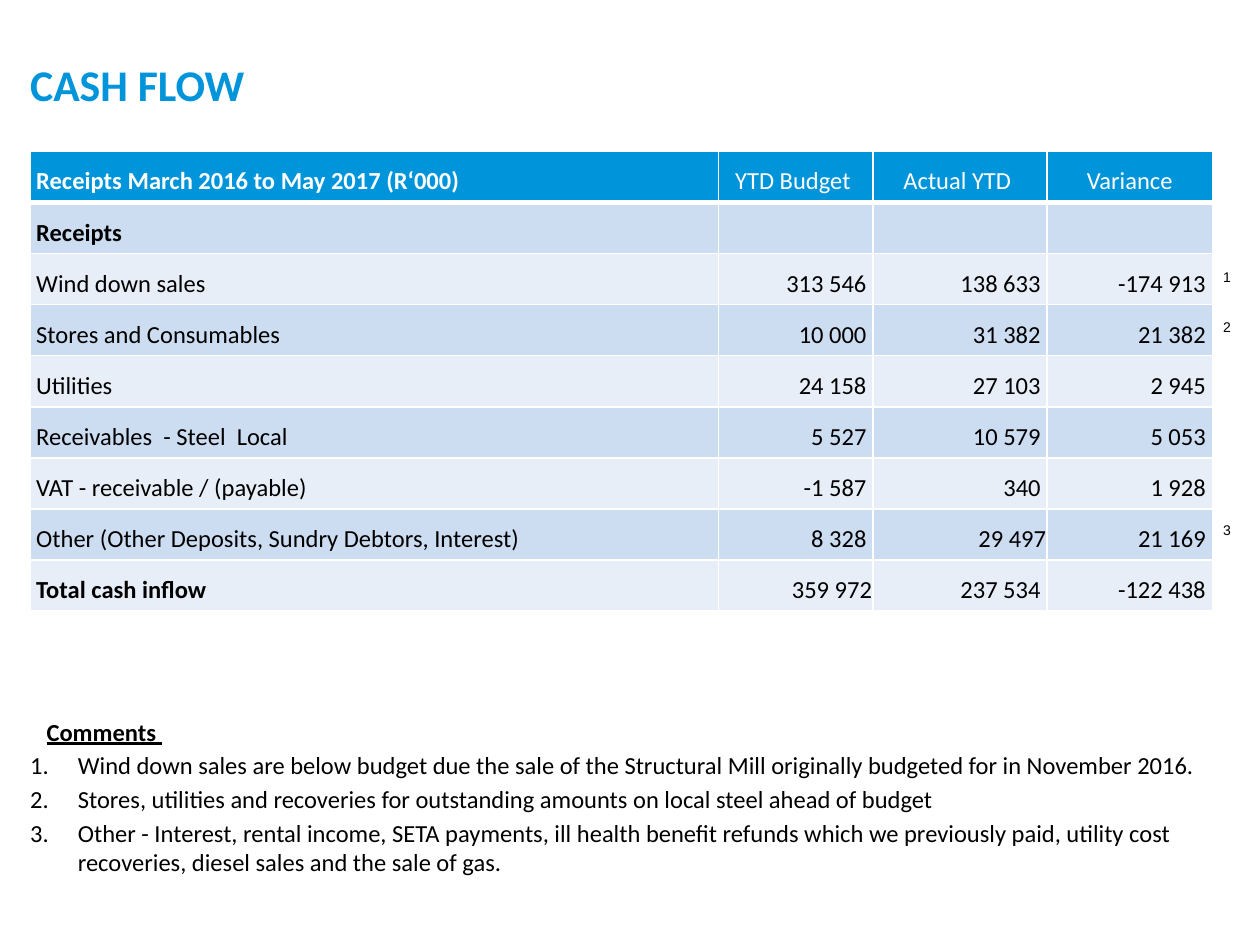
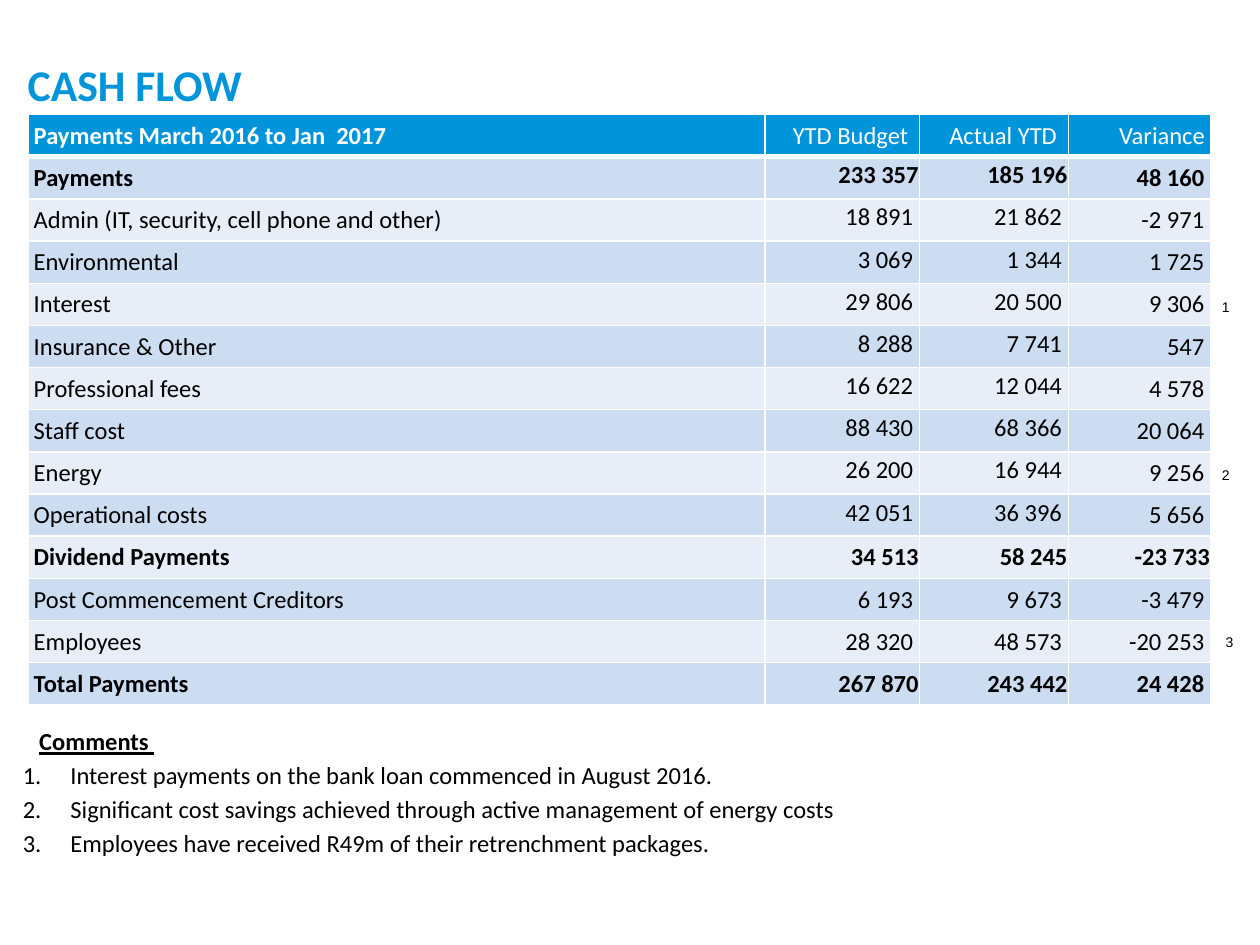
from lxml.etree import SubElement
from pptx import Presentation
from pptx.dml.color import RGBColor
from pptx.enum.text import MSO_ANCHOR, PP_ALIGN
from pptx.oxml.ns import qn
from pptx.util import Cm, Pt

BLUE = RGBColor(0x00, 0x94, 0xDA)
BLACK = RGBColor(0x00, 0x00, 0x00)
WHITE = RGBColor(0xFF, 0xFF, 0xFF)
DARK_BAND = RGBColor(0xCC, 0xDC, 0xF1)
LIGHT_BAND = RGBColor(0xE7, 0xEE, 0xF8)

TITLE = {"name": "Calibri", "size": Pt(25), "bold": True, "color": BLUE}
BODY = {"name": "Calibri", "size": Pt(14), "bold": False, "color": BLACK}
COMMENTS_HEADING = {**BODY, "bold": True, "underline": True}
MARKER = {"name": "Arial", "size": Pt(8), "color": BLACK}

HEADINGS = ["YTD Budget ", "Actual YTD ", "Variance"]
BORDERS = {"a:lnL": 1, "a:lnR": 1, "a:lnT": 1, "a:lnB": 1}

PAGES = [
    {
        "title_left": 0.61,
        "table_top": 3.05,
        "columns": [13.87, 3.12, 3.51, 3.33],
        "row_height": 1.03,
        "heading_align": PP_ALIGN.CENTER,
        "heading": "Receipts March 2016 to May 2017 (R‘000)",
        "rows": [
            ["Receipts", "", "", ""],
            ["Wind down sales", "313 546 ", "138 633 ", "-174 913 "],
            ["Stores and Consumables", "10 000 ", "31 382 ", "21 382 "],
            ["Utilities", "24 158 ", "27 103 ", "2 945 "],
            ["Receivables  - Steel  Local", "5 527 ", "10 579 ", "5 053 "],
            ["VAT - receivable / (payable)", "-1 587 ", "340 ", "1 928 "],
            ["Other (Other Deposits, Sundry Debtors, Interest)", "8 328 ", "29 497", "21 169 "],
            ["Total cash inflow", "359 972", "237 534 ", "-122 438 "],
        ],
        "bold_labels": ["Receipts", "Total cash inflow"],
        "bold_values": False,
        "middle_rows": 0,
        "markers": [(24.41, 5.28), (24.41, 6.3), (24.41, 10.39)],
        "comments_at": (0.61, 14.15),
        "comments": [
            "Wind down sales are below budget due the sale of the Structural Mill originally budgeted for in November 2016.",
            "Stores, utilities and recoveries for outstanding amounts on local steel ahead of budget",
            "Other - Interest, rental income, SETA payments, ill health benefit refunds which we previously paid, "
            "utility cost recoveries, diesel sales and the sale of gas.",
        ],
    },
    {
        "title_left": 0.56,
        "table_top": 2.31,
        "columns": [14.86, 3.12, 3, 2.87],
        "row_height": 0.85,
        "heading_align": PP_ALIGN.RIGHT,
        "heading": "Payments March 2016 to Jan  2017",
        "rows": [
            ["Payments", "233 357", "185 196", "48 160 "],
            ["Admin (IT, security, cell phone and other)", "18 891 ", "21 862 ", "-2 971 "],
            ["Environmental", "3 069 ", "1 344 ", "1 725 "],
            ["Interest", "29 806 ", "20 500 ", "9 306 "],
            ["Insurance & Other", "8 288 ", "7 741 ", "547 "],
            ["Professional fees", "16 622 ", "12 044 ", "4 578 "],
            ["Staff cost", "88 430 ", "68 366 ", "20 064 "],
            ["Energy", "26 200 ", "16 944 ", "9 256 "],
            ["Operational costs", "42 051 ", "36 396 ", "5 656 "],
            ["Dividend Payments", "34 513", "58 245", "-23 733"],
            ["Post Commencement Creditors", "6 193 ", "9 673 ", "-3 479 "],
            ["Employees", "28 320 ", "48 573 ", "-20 253 "],
            ["Total Payments", "267 870", "243 442", "24 428 "],
        ],
        "bold_labels": ["Payments", "Dividend Payments", "Total Payments"],
        "bold_values": True,
        "middle_rows": 9,
        "markers": [(24.38, 5.89), (24.38, 9.27), (24.46, 12.65)],
        "comments_at": (0.46, 14.35),
        "comments": [
            "Interest payments on the bank loan commenced in August 2016.",
            "Significant cost savings achieved through active management of energy costs",
            "Employees have received R49m of their retrenchment packages.",
        ],
    },
]


def write(para, text, style):
    span = para.add_run()
    span.text = text
    for name, value in style.items():
        if name == "color":
            span.font.color.rgb = value
        else:
            setattr(span.font, name, value)


def add_frame(page, left, top, width, height, margin=0):
    box = page.shapes.add_textbox(Cm(left), Cm(top), Cm(width), Cm(height))
    frame = box.text_frame
    frame.word_wrap = True
    for side in ("left", "right", "top", "bottom"):
        setattr(frame, f"margin_{side}", Cm(margin))
    return frame


deck = Presentation()
deck.slide_width, deck.slide_height = Cm(25.4), Cm(19.05)

for content in PAGES:
    page = deck.slides.add_slide(deck.slide_layouts[6])

    title = add_frame(page, content["title_left"], 0.99, 15.49, 1.4)
    title.vertical_anchor = MSO_ANCHOR.MIDDLE
    write(title.paragraphs[0], "CASH FLOW", TITLE)

    rows = [[content["heading"], *HEADINGS], *content["rows"]]
    columns = content["columns"]
    table = page.shapes.add_table(
        len(rows), len(columns), Cm(content["title_left"]), Cm(content["table_top"]),
        Cm(sum(columns)), Cm(content["row_height"] * len(rows)),
    ).table
    for column, width in zip(table.columns, columns):
        column.width = Cm(width)

    for row_number, values in enumerate(rows):
        table.rows[row_number].height = Cm(content["row_height"])
        is_heading = row_number == 0
        is_bold = values[0] in content["bold_labels"]
        for column_number, text in enumerate(values):
            cell = table.cell(row_number, column_number)
            is_label = column_number == 0
            is_value = not is_heading and not is_label

            properties = cell._tc.get_or_add_tcPr()
            for tag, points in BORDERS.items():
                if (is_heading and tag == "a:lnB") or (row_number == 1 and tag == "a:lnT"):
                    points = 3
                line = SubElement(properties, qn(tag), w=str(Pt(points)))
                SubElement(SubElement(line, qn("a:solidFill")), qn("a:srgbClr"), val=str(WHITE))
            cell.fill.solid()
            cell.fill.fore_color.rgb = BLUE if is_heading else DARK_BAND if row_number % 2 else LIGHT_BAND

            is_middle = is_value and row_number <= content["middle_rows"] and column_number < 3
            small = Cm(0.02 if is_value else 0.12)
            cell_format = {
                "margin_left": small,
                "margin_right": small,
                "margin_top": small,
                "margin_bottom": Cm(0.12),
                "vertical_anchor": MSO_ANCHOR.MIDDLE if is_middle else MSO_ANCHOR.BOTTOM,
            }
            for name, value in cell_format.items():
                setattr(cell, name, value)

            if text:
                para = cell.text_frame.paragraphs[0]
                if not is_label:
                    para.alignment = content["heading_align"] if is_heading else PP_ALIGN.RIGHT
                bold = is_label and is_heading or is_bold and (is_label or content["bold_values"])
                write(para, text, {**BODY, "bold": bold, "color": WHITE if is_heading else BLACK})

    for number, (left, top) in enumerate(content["markers"], 1):
        marker = add_frame(page, left, top, 0.61, 0.61, 0.13)
        marker.margin_left = Cm(0.25)
        marker.margin_right = Cm(0)
        write(marker.paragraphs[0], str(number), MARKER)

    comments = add_frame(page, *content["comments_at"], 24.03, 3.94)
    heading = comments.paragraphs[0]
    heading.alignment = PP_ALIGN.JUSTIFY
    heading.line_spacing = 1.5
    heading._p.get_or_add_pPr().set("marL", str(Cm(0.33)))
    write(heading, "Comments ", COMMENTS_HEADING)
    for comment in content["comments"]:
        para = comments.add_paragraph()
        para.space_before = Pt(2.5)
        properties = para._p.get_or_add_pPr()
        properties.set("marL", str(Cm(0.96)))
        properties.set("indent", str(Cm(-0.96)))
        SubElement(properties, qn("a:buFont"), typeface="+mj-lt")
        SubElement(properties, qn("a:buAutoNum"), type="arabicPeriod")
        write(para, comment, BODY)

deck.save("out.pptx")
